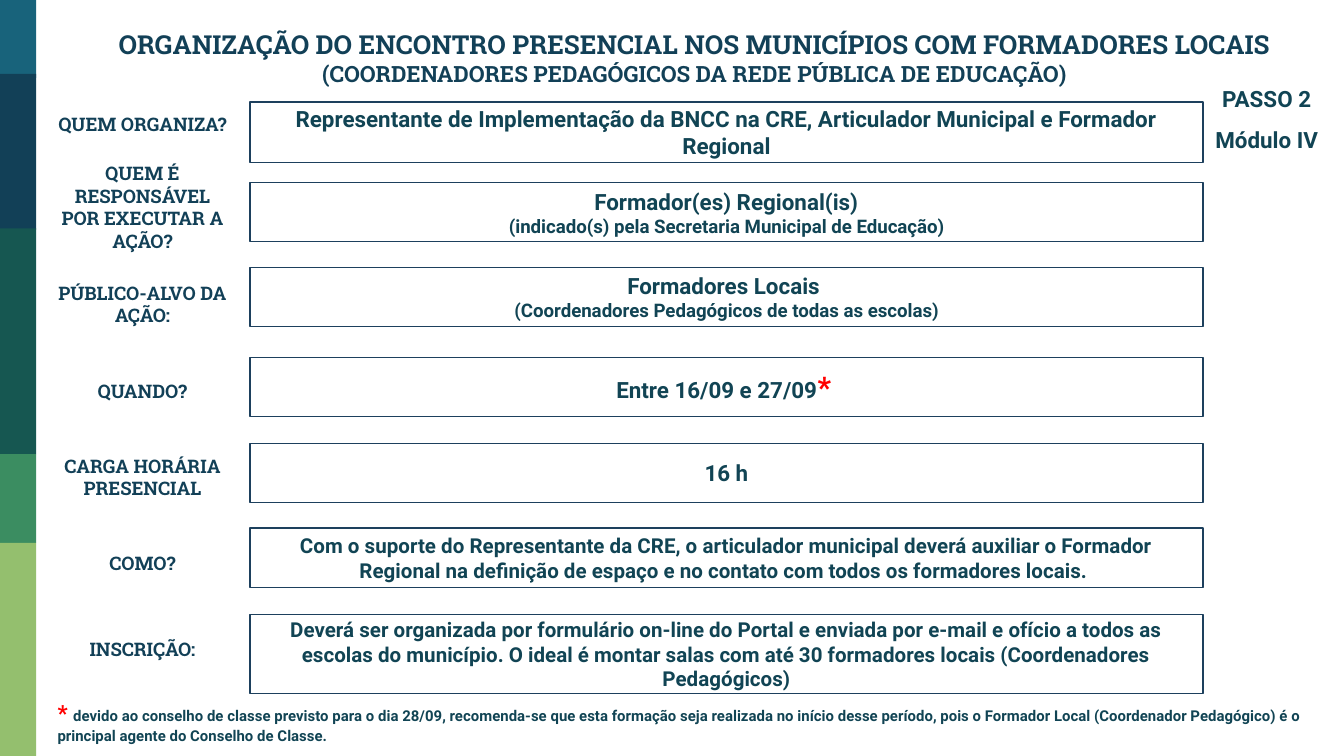
from pptx import Presentation
from pptx.dml.color import RGBColor
from pptx.enum import shapes, text
from pptx.util import Inches, Pt

NAVY, TEAL, RED = "124057", "114454", "FF0000"


def color(value):
    return RGBColor.from_string(value)


def write(shape, paragraphs, font="Roboto", ink=TEAL, align=text.PP_ALIGN.CENTER):
    frame = shape.text_frame
    frame.word_wrap = True
    frame.vertical_anchor = text.MSO_ANCHOR.MIDDLE
    frame.margin_left = frame.margin_right = Inches(0.1)
    frame.margin_top = frame.margin_bottom = Inches(0.1)
    for index, runs in enumerate(paragraphs):
        paragraph = frame.add_paragraph() if index else frame.paragraphs[0]
        paragraph.alignment = align
        for words, size, *own_ink in runs:
            run = paragraph.add_run()
            run.text = words
            run.font.name = font
            run.font.size = Pt(size)
            run.font.bold = True
            run.font.color.rgb = color(own_ink[0] if own_ink else ink)


prs = Presentation()
prs.slide_width = Inches(10)
prs.slide_height = prs.slide_width * 9 // 16
slide = prs.slides.add_slide(prs.slide_layouts[6])

bands = [
    (0, 0.58, "18637B"),
    (0.55, 1.16, NAVY),
    (1.7, 1.68, "165751"),
    (3.38, 0.66, "3B8D61"),
    (4.04, 1.59, "94BF6E"),
]
for top, height, fill in bands:
    band = slide.shapes.add_shape(
        shapes.MSO_SHAPE.RECTANGLE, 0, Inches(top), Inches(0.27), Inches(height))
    band.shadow.inherit = False
    band.fill.solid()
    band.fill.fore_color.rgb = color(fill)
    band.line.fill.background()

rows = [
    ("QUEM ORGANIZA?", 0.77, 0.3, 0.76, 0.45,
     [[("Representante de Implementação da BNCC na CRE, Articulador Municipal "
        "e Formador Regional", 12)]]),
    ("QUEM É RESPONSÁVEL POR EXECUTAR A AÇÃO?", 1.4, 0.28, 1.36, 0.44,
     [[("Formador(es) Regional(is)", 12)],
      [("(indicado(s) pela Secretaria Municipal de Educação)", 10)]]),
    ("PÚBLICO-ALVO DA AÇÃO:", 2.12, 0.28, 1.99, 0.44,
     [[("Formadores Locais ", 12)],
      [("(Coordenadores Pedagógicos de todas as escolas)", 10)]]),
    ("QUANDO?", 2.77, 0.28, 2.66, 0.44,
     [[("Entre 16/09 e 27/09", 12), ("*", 16, RED), (" ", 12)]]),
    ("CARGA HORÁRIA PRESENCIAL", 3.41, 0.28, 3.3, 0.44, [[("16 h", 12)]]),
    ("COMO?", 4.05, 0.28, 3.93, 0.44,
     [[("Com o suporte do Representante da CRE, o articulador municipal deverá "
        "auxiliar o Formador Regional na definição de espaço e no contato com "
        "todos os formadores locais. ", 11)]]),
    ("INSCRIÇÃO:", 4.69, 0.28, 4.57, 0.59,
     [[("Deverá ser organizada por formulário on-line do Portal e enviada por "
        "e-mail e ofício a todos as escolas do município. O ideal é montar salas "
        "com até 30 formadores locais (Coordenadores Pedagógicos)", 11)]]),
]
for question, question_top, question_height, answer_top, answer_height, answer_text in rows:
    label = slide.shapes.add_textbox(
        Inches(0.33), Inches(question_top), Inches(1.46), Inches(question_height))
    write(label, [[(question, 10)]], font="Roboto Slab", ink=NAVY)
    answer = slide.shapes.add_shape(
        shapes.MSO_SHAPE.RECTANGLE,
        Inches(1.86), Inches(answer_top), Inches(7.09), Inches(answer_height))
    answer.shadow.inherit = False
    answer.fill.background()
    answer.line.color.rgb = color("1D405D")
    answer.line.width = Pt(0.75)
    write(answer, answer_text)

title = slide.shapes.add_textbox(Inches(0.62), Inches(0.24), Inches(9.1), Inches(0.38))
write(title, [[
    ("ORGANIZAÇÃO DO ENCONTRO PRESENCIAL NOS MUNICÍPIOS COM FORMADORES LOCAIS ", 14),
    ("(COORDENADORES PEDAGÓGICOS DA REDE PÚBLICA DE EDUCAÇÃO)", 12),
]], font="Roboto Slab", ink=NAVY)

for stage, top in [("PASSO 2", 0.53), ("Módulo IV", 0.83)]:
    marker = slide.shapes.add_textbox(Inches(8.85), Inches(top), Inches(1.15), Inches(0.41))
    write(marker, [[(stage, 12)]])

footnote = slide.shapes.add_textbox(Inches(0.33), Inches(5.15), Inches(9.67), Inches(0.44))
write(footnote, [[
    ("* ", 12, RED),
    ("devido ao conselho de classe previsto para o dia 28/09, recomenda-se que esta "
     "formação seja realizada no início desse período, pois o Formador Local "
     "(Coordenador Pedagógico) é o principal agente do Conselho de Classe.", 8),
]], align=text.PP_ALIGN.LEFT)

prs.save("out.pptx")
